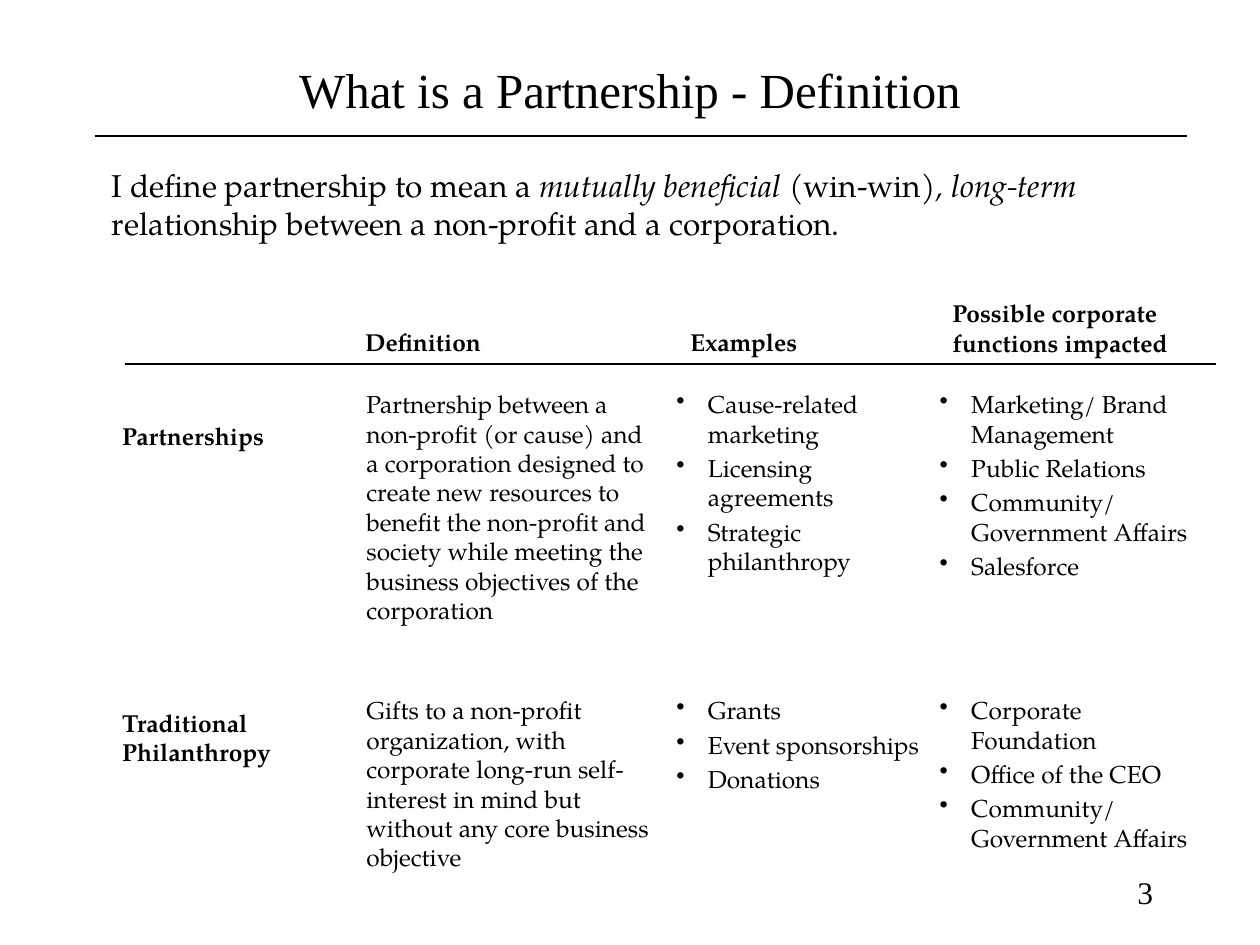
from dataclasses import dataclass

import pptx
import pptx.dml.color
import pptx.enum.shapes
import pptx.enum.text
import pptx.util
from lxml import etree

ALIGN = pptx.enum.text.PP_ALIGN
ANCHOR = pptx.enum.text.MSO_ANCHOR
INCH = pptx.util.Inches
SERIF, BODY = "Times New Roman", "TeX Gyre Pagella"
INK = "000000"
BULLET_INDENT = 0.25


@dataclass
class Span:
    text: str
    italic: bool = False


@dataclass
class Column:
    left: float
    width: float
    heading: str
    heading_left: float
    heading_width: float
    heading_height: float = 0.34


@dataclass
class Row:
    top: float
    height: float
    label: str
    label_top: float
    label_height: float
    definition: str
    bullets: list[list[str]]


# Table grid
LABEL_LEFT, LABEL_WIDTH = 0.87, 1.65
HEADING_RULE = 2.89
COLUMNS = [
    Column(2.81, 2.46, "Definition", 2.8, 1.24),
    Column(5.27, 2.17, "Examples", 5.38, 1.1),
    Column(7.36, 2.29, "Possible corporate functions impacted", 7.46, 2.35, 0.57),
]
ROWS = [
    Row(3.04, 2.53, "Partnerships", 3.29, 0.34,
        "Partnership between a non-profit (or cause) and a corporation designed to "
        "create new resources to benefit the non-profit and society while meeting "
        "the business objectives of the corporation",
        [["Cause-related marketing", "Licensing agreements", "Strategic philanthropy"],
         ["Marketing/ Brand Management", "Public Relations",
          "Community/ Government Affairs", "Salesforce"]]),
    Row(5.47, 2.03, "Traditional Philanthropy", 5.57, 0.57,
        "Gifts to a non-profit organization, with corporate long-run self-interest "
        "in mind but without any core business objective",
        [["Grants", "Event sponsorships", "Donations"],
         ["Corporate Foundation", "Office of the CEO", "Community/ Government Affairs"]]),
]


def color(value: str) -> pptx.dml.color.RGBColor:
    return pptx.dml.color.RGBColor.from_string(value)


def add_span(para, span: Span, size: float, font: str, bold: bool = False) -> None:
    run = para.add_run()
    run.text = span.text
    run.font.size = pptx.util.Pt(size)
    run.font.name = font
    run.font.bold = bold
    run.font.italic = span.italic
    run.font.color.rgb = color(INK)


def add_bullet(para) -> None:
    properties = para._p.get_or_add_pPr()
    properties.set("marL", str(INCH(BULLET_INDENT)))
    properties.set("indent", str(-INCH(BULLET_INDENT)))
    bullet = etree.SubElement(properties, pptx.oxml.ns.qn("a:buChar"))
    bullet.set("char", "•")


def add_text(page, left: float, top: float, width: float, height: float,
             paragraphs: list[list[Span]], size: float = 14, font: str = BODY,
             bold: bool = False, bulleted: bool = False):
    box = page.shapes.add_textbox(INCH(left), INCH(top), INCH(width), INCH(height))
    frame = box.text_frame
    frame.word_wrap = True
    for index, spans in enumerate(paragraphs):
        para = frame.add_paragraph() if index else frame.paragraphs[0]
        if index:
            para.space_before = pptx.util.Pt(0.2 * size)
        if bulleted:
            add_bullet(para)
        for span in spans:
            add_span(para, span, size, font, bold)
    return box


def add_rule(page, left: float, right: float, top: float) -> None:
    rule = page.shapes.add_connector(
        pptx.enum.shapes.MSO_CONNECTOR.STRAIGHT,
        INCH(left), INCH(top), INCH(right), INCH(top))
    rule.line.color.rgb = color(INK)
    rule.line.width = pptx.util.Pt(1)
    etree.SubElement(rule._element.spPr, pptx.oxml.ns.qn("a:effectLst"))


def add_title(page, text: str) -> None:
    title = page.shapes.title
    title.left, title.top = INCH(0.75), INCH(0.08)
    title.width, title.height = INCH(8.5), INCH(1.25)
    title.text_frame.vertical_anchor = ANCHOR.MIDDLE
    para = title.text_frame.paragraphs[0]
    para.alignment = ALIGN.CENTER
    add_span(para, Span(text), 28, SERIF)


def add_table_text(page) -> None:
    for column in COLUMNS:
        add_text(page, column.heading_left, HEADING_RULE - column.heading_height,
                 column.heading_width, column.heading_height,
                 [[Span(column.heading)]], bold=True)
    for row in ROWS:
        add_text(page, LABEL_LEFT, row.label_top, LABEL_WIDTH, row.label_height,
                 [[Span(row.label)]], bold=True)
        for index, (column, items) in enumerate(zip(COLUMNS, [[row.definition], *row.bullets])):
            add_text(page, column.left, row.top, column.width, row.height,
                     [[Span(item)] for item in items], bulleted=index > 0)


def main() -> None:
    deck = pptx.Presentation()
    deck.slide_width, deck.slide_height = INCH(10), INCH(7.5)
    page = deck.slides.add_slide(deck.slide_layouts[5])

    # Title and introduction
    add_title(page, "What is a Partnership - Definition")
    add_rule(page, 0.75, 9.42, 1.08)
    add_text(page, 0.79, 1.27, 8.63, 1.62, [[
        Span("I define partnership to mean a "),
        Span("mutually beneficial ", italic=True),
        Span("(win-win"),
        Span("), long-term ", italic=True),
        Span("relationship between a non-profit and a corporation."),
    ]], size=18)

    # Comparison of the two kinds of giving
    add_rule(page, 0.99, 9.65, HEADING_RULE)
    add_table_text(page)

    # Page number
    number = add_text(page, 7.17, 6.83, 2.08, 0.5, [[Span("3")]], size=18, font=SERIF)
    number.text_frame.vertical_anchor = ANCHOR.MIDDLE
    number.text_frame.paragraphs[0].alignment = ALIGN.RIGHT

    deck.save("out.pptx")


if __name__ == "__main__":
    main()
